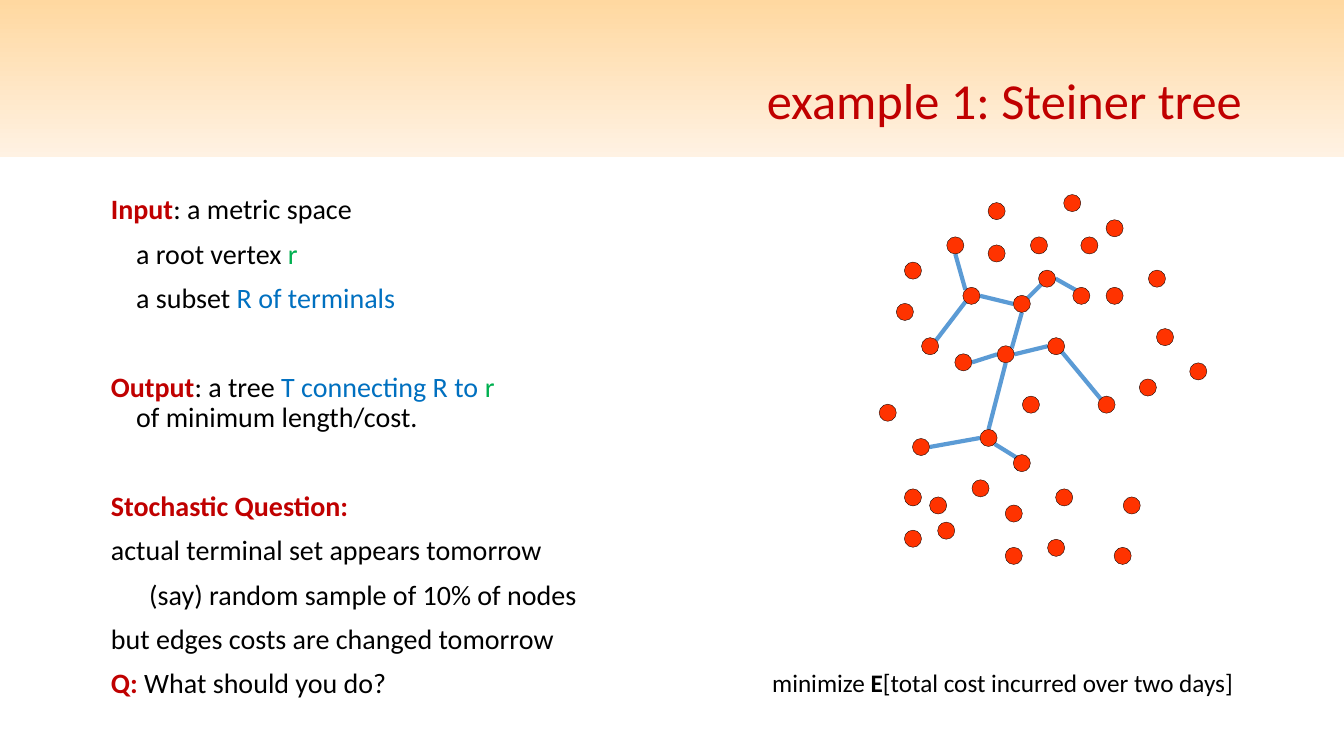
from lxml import etree
from pptx import Presentation
from pptx.dml.color import RGBColor
from pptx.enum.shapes import MSO_CONNECTOR as LINE, MSO_SHAPE as SHAPE
from pptx.enum.text import MSO_ANCHOR as ANCHOR, MSO_AUTO_SIZE as FIT, PP_ALIGN as ALIGN
from pptx.oxml.ns import qn
from pptx.util import Inches, Pt

FONT = "Calibri"
RED, BLUE, GREEN, BLACK = "C00000", "0070C0", "00B050", "000000"
DOT = 0.17
HALF, DIAG = DOT / 2, 0.06
SITES = {"n": (0, -HALF), "ne": (DIAG, -DIAG), "e": (HALF, 0), "se": (DIAG, DIAG),
         "s": (0, HALF), "sw": (-DIAG, DIAG), "w": (-HALF, 0), "nw": (-DIAG, -DIAG)}

TREE_NODES = {
    "A": (9.39, 2.35), "B": (9.55, 2.85), "C": (10.05, 2.93), "D": (10.3, 2.68),
    "E": (10.64, 2.85), "F": (9.89, 3.43), "G": (9.47, 3.51), "H": (10.39, 3.35),
    "I": (10.89, 3.93), "J": (9.72, 4.26), "K": (9.05, 4.35), "L": (10.05, 4.51),
    "M": (9.14, 3.35),
}
TREE_EDGES = [
    ("A", "s", "B", "nw"), ("B", "e", "C", "w"), ("C", "ne", "D", "sw"),
    ("D", "e", "E", "nw"), ("C", "s", "F", "ne"), ("G", "e", "F", "w"),
    ("F", "e", "H", "w"), ("H", "se", "I", "nw"), ("F", "s", "J", "n"),
    ("J", "w", "K", "e"), ("L", "nw", "J", "se"), ("B", "sw", "M", "ne"),
]
OTHER_NODES = [
    (10.97, 2.18), (8.89, 3.01), (11.47, 3.26), (11.14, 4.93), (9.8, 2.43),
    (11.8, 3.6), (11.39, 2.68), (11.3, 3.76), (10.47, 4.85), (10.97, 2.85),
    (8.97, 2.6), (10.14, 3.93), (8.97, 5.26), (8.72, 4.01), (10.22, 2.35),
    (10.55, 1.93), (10.72, 2.35), (9.8, 2.01), (8.97, 4.85), (9.97, 5.01),
    (11.05, 5.43), (9.64, 4.76), (10.39, 5.35), (9.22, 4.93), (9.97, 5.43),
    (9.3, 5.18),
]

HANGING, INDENTED, DEEP = (0.25, -0.25), (0.25, 0), (0.38, 0)
GAP, SECTION_GAP = 10, 42
BODY = [
    (HANGING, GAP, [("Input", RED, True), (": a metric space", BLACK, False)]),
    (INDENTED, GAP, [("a root vertex ", BLACK, False), ("r", GREEN, False)]),
    (INDENTED, GAP, [("a subset ", BLACK, False), ("R of terminals", BLUE, False)]),
    (HANGING, SECTION_GAP, [("Output", RED, True), (": a tree ", BLACK, False),
                            ("T connecting R to ", BLUE, False), ("r", GREEN, False),
                            ("\n", BLACK, False),
                            ("of minimum length/cost.", BLACK, False)]),
    (HANGING, SECTION_GAP, [("Stochastic Question:", RED, True)]),
    (HANGING, GAP, [("actual terminal set appears tomorrow", BLACK, False)]),
    (DEEP, GAP, [("(say) random sample of 10% of nodes", BLACK, False)]),
    (HANGING, GAP, [("but edges costs are changed tomorrow", BLACK, False)]),
    (HANGING, GAP, [("Q:", RED, True), (" What should you do?", BLACK, False)]),
]
CAPTION = [("minimize ", BLACK, False), ("E", BLACK, True),
           ("[total cost incurred over two days]", BLACK, False)]


def rgb(value):
    """Turn a hex string into a colour."""
    return RGBColor.from_string(value)


def place(sp, left, top, width, height):
    """Move and size a shape, in inches."""
    sp.left, sp.top = Inches(left), Inches(top)
    sp.width, sp.height = Inches(width), Inches(height)


def write(p, runs, size):
    """Fill a paragraph with coloured runs; a newline run is a line break."""
    p.font.name, p.font.size = FONT, Pt(size)
    for text, color, bold in runs:
        if text == "\n":
            p.add_line_break()
            continue
        r = p.add_run()
        r.text = text
        r.font.color.rgb = rgb(color)
        r.font.bold = bold


def add_banner(slide):
    """Put the gradient band behind the other shapes."""
    sp = slide.shapes.add_shape(SHAPE.RECTANGLE, 0, 0, Inches(13.33), Inches(1.56))
    sp.shadow.inherit = False
    sp.line.fill.background()
    sp.fill.gradient()
    sp.fill.gradient_angle = 270
    for stop, color in zip(sp.fill.gradient_stops, ("FFD8A0", "FFF2E3")):
        stop.color.rgb = rgb(color)
    slide.shapes._spTree.insert(2, sp._element)


def fill_title(sp):
    """Write the slide title."""
    place(sp, 0.92, 0.3, 11.5, 1.45)
    tf = sp.text_frame
    tf.auto_size, tf.vertical_anchor = FIT.NONE, ANCHOR.MIDDLE
    p = tf.paragraphs[0]
    p.alignment, p.line_spacing = ALIGN.RIGHT, 0.9
    write(p, [("example 1: Steiner tree", RED, False)], 36)


def fill_body(sp):
    """Write the problem statement without bullets."""
    place(sp, 1, 1.89, 5.25, 5.14)
    tf = sp.text_frame
    tf.auto_size, tf.vertical_anchor = FIT.NONE, ANCHOR.TOP
    for i, ((margin, indent), gap, runs) in enumerate(BODY):
        p = tf.add_paragraph() if i else tf.paragraphs[0]
        p.line_spacing, p.space_before = 0.9, Pt(gap)
        write(p, runs, 20)
        pPr = p._p.get_or_add_pPr()
        pPr.set("marL", str(Inches(margin)))
        pPr.set("indent", str(Inches(indent)))
        none = etree.Element(qn("a:buNone"))
        pPr.find(qn("a:spcBef")).addnext(none)


def add_edge(slide, start, start_site, end, end_site):
    """Draw a tree edge between sites on the rims of two nodes."""
    ends = []
    for node, site in ((start, start_site), (end, end_site)):
        for corner, offset in zip(TREE_NODES[node], SITES[site]):
            ends.append(Inches(corner + HALF + offset))
    c = slide.shapes.add_connector(LINE.STRAIGHT, *ends)
    c.line.color.rgb = rgb("5B9BD5")
    c.line.width = Pt(3)
    etree.SubElement(c._element.spPr, qn("a:effectLst"))


def add_node(slide, left, top):
    """Draw one point of the metric space."""
    sp = slide.shapes.add_shape(SHAPE.OVAL, Inches(left), Inches(top),
                                Inches(DOT), Inches(DOT))
    sp.shadow.inherit = False
    sp.fill.solid()
    sp.fill.fore_color.rgb = rgb("FF3300")
    sp.line.color.rgb = rgb(BLACK)
    sp.line.width = Pt(0.25)


def add_caption(slide):
    """Write the objective under the drawing."""
    sp = slide.shapes.add_textbox(Inches(7.56), Inches(6.57), Inches(4.82), Inches(0.4))
    tf = sp.text_frame
    tf.word_wrap, tf.auto_size = False, FIT.SHAPE_TO_FIT_TEXT
    write(tf.paragraphs[0], CAPTION, 18)


def main():
    """Build and save the slide."""
    prs = Presentation()
    prs.slide_width, prs.slide_height = Inches(13.33), Inches(7.5)
    slide = prs.slides.add_slide(prs.slide_layouts[1])
    add_banner(slide)
    fill_title(slide.shapes.title)
    fill_body(slide.placeholders[1])
    for edge in TREE_EDGES:
        add_edge(slide, *edge)
    for left, top in [*TREE_NODES.values(), *OTHER_NODES]:
        add_node(slide, left, top)
    add_caption(slide)
    prs.save("out.pptx")


if __name__ == "__main__":
    main()
